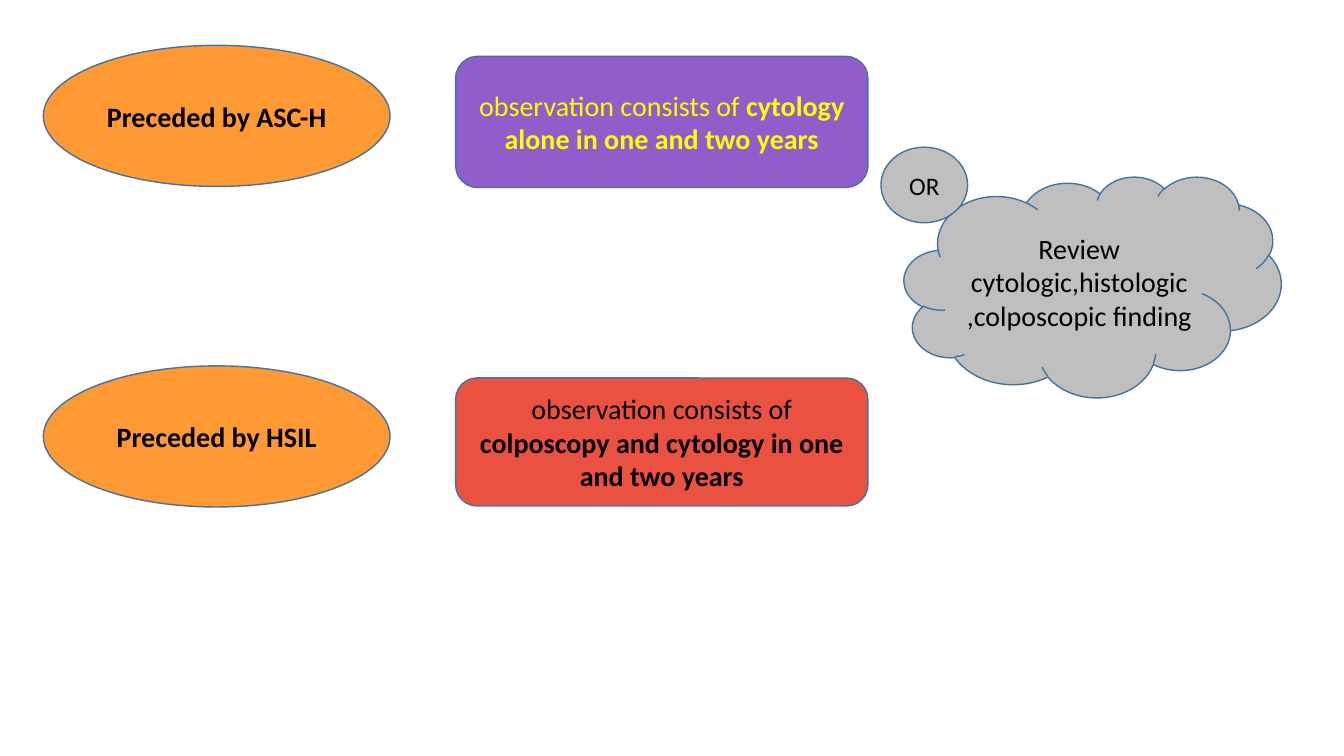
import dataclasses

import pptx
import pptx.dml.color
import pptx.enum.shapes
import pptx.enum.text
import pptx.util

Pt = pptx.util.Pt
SHAPE = pptx.enum.shapes.MSO_SHAPE


@dataclasses.dataclass(frozen=True)
class Theme:
    font: str = "Calibri"
    body_size: float = 20
    small_size: float = 18
    outline_width: float = 1
    outline: str = "43739E"
    orange: str = "FF9933"
    purple: str = "915DCB"
    red: str = "EB5141"
    grey: str = "BFBFBF"
    black: str = "000000"
    yellow: str = "FFFF00"


THEME = Theme()


def rgb(value):
    return pptx.dml.color.RGBColor.from_string(value)


def add_bubble(slide, kind, box, fill, runs, color=THEME.black, size=THEME.body_size):
    """Outlined shape with centred text; runs are (text, bold) pairs."""
    bubble = slide.shapes.add_shape(kind, *(Pt(length) for length in box))
    bubble.shadow.inherit = False
    bubble.fill.solid()
    bubble.fill.fore_color.rgb = rgb(fill)
    bubble.line.color.rgb = rgb(THEME.outline)
    bubble.line.width = Pt(THEME.outline_width)

    frame = bubble.text_frame
    frame.word_wrap = True
    frame.vertical_anchor = pptx.enum.text.MSO_ANCHOR.MIDDLE
    paragraph = frame.paragraphs[0]
    paragraph.alignment = pptx.enum.text.PP_ALIGN.CENTER
    paragraph.font.name = THEME.font
    paragraph.font.size = Pt(size)
    paragraph.font.color.rgb = rgb(color)
    for text, bold in runs:
        run = paragraph.add_run()
        run.text = text
        # Run-level values override the shape style's white text
        run.font.color.rgb = rgb(color)
        run.font.bold = bold


def add_pathway(slide, box, history, follow_up, fill, color, inset):
    """Preceding result on the left, its observation plan on the right."""
    left, top, width, height = box
    history_width, plan_width = 247.68, 294.48
    add_bubble(slide, SHAPE.OVAL, (left, top, history_width, height),
               THEME.orange, [(history, True)])
    inset_top, inset_bottom = inset
    plan_box = (left + width - plan_width, top + inset_top,
                plan_width, height - inset_top - inset_bottom)
    add_bubble(slide, SHAPE.ROUNDED_RECTANGLE, plan_box, fill,
               [("observation consists of ", False), (follow_up, True)], color)


def add_alternative(slide, box):
    """Review cloud with the OR circle at its upper left corner."""
    left, top, width, height = box
    cloud_x, cloud_y = 16.56, 20.88
    add_bubble(slide, SHAPE.CLOUD,
               (left + cloud_x, top + cloud_y, width - cloud_x, height - cloud_y),
               THEME.grey,
               [("Review cytologic,histologic ,colposcopic finding", False)])
    add_bubble(slide, SHAPE.FLOWCHART_CONNECTOR, (left, top, 61.92, 54),
               THEME.grey, [("OR", False)], size=THEME.small_size)


def main():
    deck = pptx.Presentation()
    deck.slide_width, deck.slide_height = Pt(960), Pt(540)
    slide = deck.slides.add_slide(deck.slide_layouts[6])

    # Two pathways, one per preceding result
    pathways = [
        ("Preceded by ASC-H", "cytology alone in one and two years",
         THEME.purple, THEME.yellow, (7.92, -0.72)),
        ("Preceded by HSIL", "colposcopy and cytology in one and two years",
         THEME.red, THEME.black, (8.64, 0.72)),
    ]
    for row, pathway in enumerate(pathways):
        add_pathway(slide, (30.96, 32.4 + row * 228.96, 588.96, 100.8), *pathway)

    # Alternative to observation
    add_alternative(slide, (629.28, 105.12, 285.84, 178.56))

    deck.save("out.pptx")


if __name__ == "__main__":
    main()
